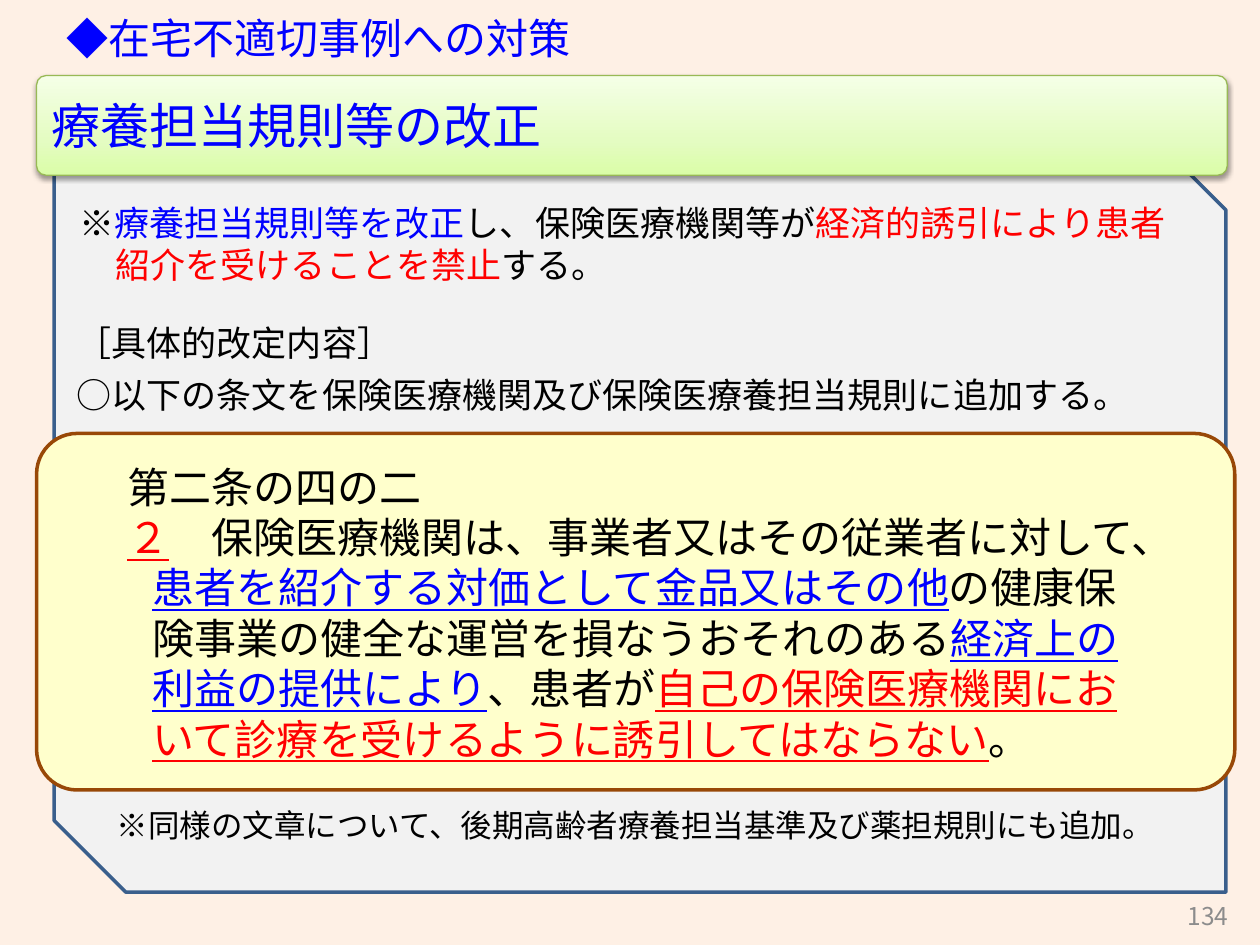
from lxml.etree import SubElement
from pptx import Presentation
from pptx.dml.color import RGBColor
from pptx.enum.shapes import MSO_SHAPE as Preset
from pptx.enum.text import MSO_ANCHOR as Anchor, MSO_AUTO_SIZE as AutoSize, PP_ALIGN as Align
from pptx.oxml.ns import qn
from pptx.util import Inches, Pt

CREAM = RGBColor(0xFE, 0xF0, 0xE5)
PANEL_GRAY = RGBColor(0xF2, 0xF2, 0xF2)
PANEL_LINE = RGBColor(0x3A, 0x5F, 0x8C)
YELLOW = RGBColor(0xFF, 0xFF, 0xCC)
BROWN = RGBColor(0x98, 0x48, 0x07)
GREEN = RGBColor(0x98, 0xB9, 0x55)
BLACK = RGBColor(0, 0, 0)
BLUE = RGBColor(0, 0, 0xFF)
RED = RGBColor(0xFF, 0, 0)
NUMBER_GRAY = RGBColor(0x8C, 0x8C, 0x8C)
HEADER_STOPS = [(0, "DAFDA7"), (35, "E4FCC2"), (100, "F5FFE7")]

GOTHIC = "Noto Sans CJK JP"
CALIBRI = "Calibri"

TOPIC = [[("◆在宅不適切事例への対策", BLUE)]]
HEADER = [[("療養担当規則等の改正", BLUE)]]
SUMMARY = [[
    ("※", BLACK),
    ("療養担当規則等を改正", BLUE),
    ("し、保険医療機関等が", BLACK),
    ("経済的誘引により患者紹介を受けることを禁止", RED),
    ("する。", BLACK),
]]
DETAILS = [
    [("［具体的改定内容］", BLACK)],
    [("○以下の条文を保険医療機関及び保険医療養担当規則に追加する。", BLACK)],
]
ARTICLE = [
    [("第二条の四の二", BLACK)],
    [
        ("２", RED),
        ("　保険医療機関は、事業者又はその従業者に対して、", BLACK),
        ("患者を紹介する対価として金品又はその他", BLUE),
        ("の健康保険事業の健全な運営を損なうおそれのある", BLACK),
        ("経済上の利益の提供により", BLUE),
        ("、患者が", BLACK),
        ("自己の保険医療機関において診療を受けるように誘引してはならない", RED),
        ("。", BLACK),
    ],
]
NOTE = [[("※同様の文章について、後期高齢者療養担当基準及び薬担規則にも追加。", BLACK)]]
PAGE_NUMBER = [[("134", NUMBER_GRAY)]]


def add_panel(slide, preset, box, adjustments, line_color, line_width, fill_color=None):
    shape = slide.shapes.add_shape(preset, *map(Inches, box))
    for index, value in enumerate(adjustments):
        shape.adjustments[index] = value
    shape.shadow.inherit = False
    if fill_color is not None:
        shape.fill.solid()
        shape.fill.fore_color.rgb = fill_color
    shape.line.color.rgb = line_color
    shape.line.width = Pt(line_width)
    return shape


def write_text(shape, paragraphs, size, font=GOTHIC, align=Align.LEFT, underline=False):
    frame = shape.text_frame
    for index, runs in enumerate(paragraphs):
        paragraph = frame.paragraphs[0] if index == 0 else frame.add_paragraph()
        paragraph.alignment = align
        for text, color in runs:
            run = paragraph.add_run()
            run.text = text
            run.font.size = Pt(size)
            run.font.name = font
            run.font.color.rgb = color
            if underline and color != BLACK:
                run.font.underline = True
            SubElement(run.font._element, qn("a:ea"), typeface=GOTHIC)
    return frame


def add_text(slide, box, paragraphs, size, wrap=True, grow=True, **style):
    text_box = slide.shapes.add_textbox(*map(Inches, box))
    frame = write_text(text_box, paragraphs, size, **style)
    frame.word_wrap = wrap
    if grow:
        frame.auto_size = AutoSize.SHAPE_TO_FIT_TEXT
    return frame


def hang(paragraph, indent):
    properties = paragraph._p.get_or_add_pPr()
    properties.set("marL", str(Inches(indent)))
    properties.set("indent", str(-Inches(indent)))


def style_header(shape):
    shape.fill.gradient()
    shape.fill.gradient_angle = 90
    properties = shape._element.spPr
    stops = properties.find(".//" + qn("a:gsLst"))
    stops.clear()
    for position, color in HEADER_STOPS:
        stop = SubElement(stops, qn("a:gs"), pos=str(position * 1000))
        SubElement(stop, qn("a:srgbClr"), val=color)
    effects = properties.find(qn("a:effectLst"))
    shadow = SubElement(effects, qn("a:outerShdw"), blurRad=str(Pt(3.1)),
                        dist=str(Pt(1.6)), dir="5400000", rotWithShape="0")
    color = SubElement(shadow, qn("a:srgbClr"), val="000000")
    SubElement(color, qn("a:alpha"), val="38000")


def main():
    presentation = Presentation()
    presentation.slide_width, presentation.slide_height = Inches(10), Inches(7.5)
    slide = presentation.slides.add_slide(presentation.slide_layouts[6])
    slide.background.fill.solid()
    slide.background.fill.fore_color.rgb = CREAM

    add_panel(slide, Preset.SNIP_2_DIAG_RECTANGLE, (0.43, 1.1, 9.3, 5.98),
              (0, 0.095), PANEL_LINE, 2, PANEL_GRAY)
    add_panel(slide, Preset.ROUNDED_RECTANGLE, (0.29, 3.44, 9.51, 2.83),
              (0.114,), BROWN, 2, YELLOW)

    number = add_text(slide, (7.52, 7.07, 2.33, 0.4), PAGE_NUMBER, 14, grow=False, align=Align.RIGHT)
    number.vertical_anchor = Anchor.MIDDLE
    summary = add_text(slide, (0.53, 1.55, 8.98, 0.77), SUMMARY, 20)
    details = add_text(slide, (0.51, 2.5, 8.58, 0.86), DETAILS, 20)
    article = add_text(slide, (0.91, 3.61, 8.19, 2.52), ARTICLE, 24, font=CALIBRI, underline=True)
    note = add_text(slide, (0.83, 6.35, 8.58, 0.4), NOTE, 18)

    for frame in (summary, details, note):
        for paragraph in frame.paragraphs:
            hang(paragraph, 0.29)
    hang(article.paragraphs[1], 0.2)
    summary.paragraphs[0].space_after = Pt(12)
    details.paragraphs[1].space_before = Pt(6)

    header = add_panel(slide, Preset.ROUNDED_RECTANGLE, (0.29, 0.6, 9.45, 0.79),
                       (0.094,), GREEN, 0.75)
    style_header(header)
    write_text(header, HEADER, 28).vertical_anchor = Anchor.MIDDLE
    add_text(slide, (0.43, 0.05, 4.24, 0.5), TOPIC, 24, wrap=False)

    presentation.save("out.pptx")


if __name__ == "__main__":
    main()
